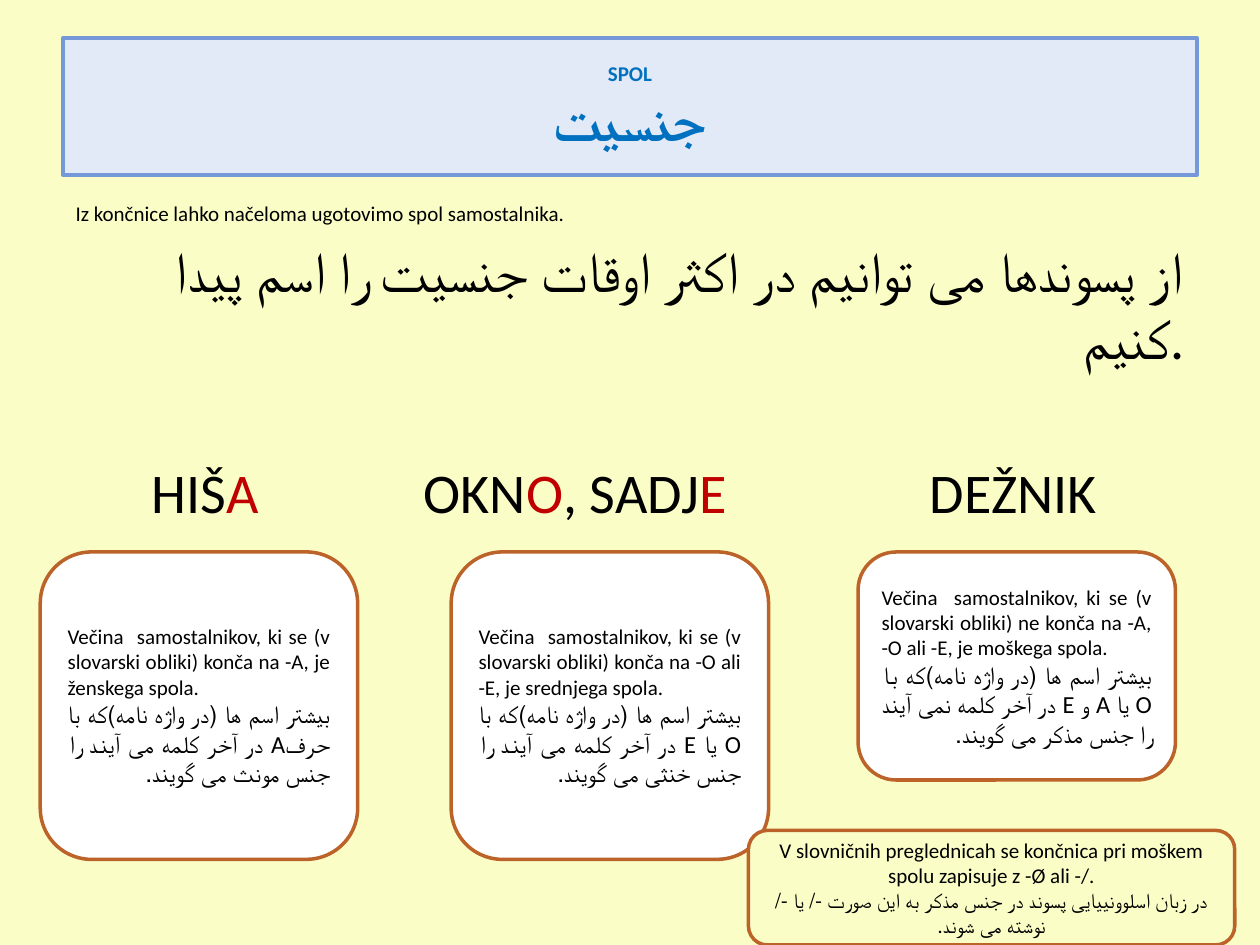
from lxml.etree import SubElement
from pptx import Presentation
from pptx.dml.color import RGBColor
from pptx.enum.shapes import MSO_SHAPE as Shape
from pptx.enum.text import MSO_ANCHOR as Anchor, MSO_AUTO_SIZE as AutoSize, PP_ALIGN as Align
from pptx.oxml.ns import qn
from pptx.util import Pt

CREAM = RGBColor(0xFA, 0xFE, 0xC6)
PALE_BLUE = RGBColor(0xE3, 0xEA, 0xF7)
BORDER_BLUE = RGBColor(0x75, 0x98, 0xD9)
TITLE_BLUE = RGBColor(0x00, 0x70, 0xC0)
BROWN = RGBColor(0xBC, 0x63, 0x29)
WHITE = RGBColor(0xFF, 0xFF, 0xFF)
BLACK = RGBColor(0x00, 0x00, 0x00)
RED = RGBColor(0xC0, 0x00, 0x00)


class GenderSlide:
    """Holds the style and the slide being built."""

    font = "Calibri"
    small, large = 12, 32
    border = 2

    def __init__(self, deck):
        self.slide = deck.slides.add_slide(deck.slide_layouts[1])
        self.slide.background.fill.solid()
        self.slide.background.fill.fore_color.rgb = CREAM

    def place(self, shape, left, top, width, height):
        shape.left, shape.top = Pt(left), Pt(top)
        shape.width, shape.height = Pt(width), Pt(height)

    def paint(self, shape, fill, line):
        shape.fill.solid()
        shape.fill.fore_color.rgb = fill
        shape.line.color.rgb = line
        shape.line.width = Pt(self.border)

    def format_run(self, run, size, color=BLACK, bold=None):
        run.font.name = self.font
        run.font.size = Pt(size)
        run.font.color.rgb = color
        run.font.bold = bold

    def title(self, latin, persian):
        title = self.slide.shapes.title
        self.place(title, 36, 21.6, 648, 78.5)
        self.paint(title, PALE_BLUE, BORDER_BLUE)
        frame = title.text_frame
        frame.auto_size = AutoSize.NONE
        frame.vertical_anchor = Anchor.MIDDLE
        frame.text = f"{latin}\n{persian}"
        for line, size in zip(frame.paragraphs, (self.small, self.large)):
            line.alignment = Align.CENTER
            self.format_run(line.runs[0], size, TITLE_BLUE, True)

    def body(self, latin, persian):
        body = self.slide.placeholders[1]
        self.place(body, 36, 110.9, 648, 140)
        frame = body.text_frame
        frame.auto_size = AutoSize.NONE
        frame.text = f"{latin}\n{persian}"
        rule, translation = frame.paragraphs
        translation.alignment = Align.RIGHT
        for line, gap, size in ((rule, 2.4, self.small), (translation, 6.4, self.large)):
            line.space_before = Pt(gap)
            SubElement(line._p.get_or_add_pPr(), qn("a:buNone"))
            self.format_run(line.runs[0], size)

    def example(self, left, width, parts):
        """Example words; stems and red endings alternate."""
        example = self.slide.shapes.add_textbox(Pt(left), Pt(257.9), Pt(width), Pt(46.2))
        example.text_frame.word_wrap = True
        line = example.text_frame.paragraphs[0]
        for index, part in enumerate(parts):
            run = line.add_run()
            run.text = part
            self.format_run(run, self.large, RED if index % 2 else BLACK)

    def rule_box(self, bounds, latin, persian, fill=WHITE, align=Align.JUSTIFY, persian_size=14):
        box = self.slide.shapes.add_shape(Shape.ROUNDED_RECTANGLE, *map(Pt, bounds))
        box.shadow.inherit = False
        self.paint(box, fill, BROWN)
        frame = box.text_frame
        frame.word_wrap = True
        frame.vertical_anchor = Anchor.MIDDLE
        frame.text = f"{latin}\n{persian}"
        for line, size in zip(frame.paragraphs, (self.small, persian_size)):
            line.alignment = align
            self.format_run(line.runs[0], size)
        frame.paragraphs[1]._p.get_or_add_pPr().set("rtl", "1")


def main():
    deck = Presentation()
    deck.slide_width, deck.slide_height = Pt(720), Pt(540)
    gender = GenderSlide(deck)

    # Heading and introduction
    gender.title("SPOL", "جنسیت")
    gender.body(
        "Iz končnice lahko načeloma ugotovimo spol samostalnika.",
        "از پسوندها می توانیم در اکثر اوقات جنسیت را اسم پیدا کنیم.",
    )

    # Example words above the rules
    gender.example(79.7, 90, ("HIŠ", "A"))
    gender.example(235, 200, ("OKN", "O", ", SADJ", "E"))
    gender.example(524.2, 125, ("DEŽNIK",))

    # One rule for each gender
    rules = [
        (23, 175.7,
         "Večina  samostalnikov, ki se (v slovarski obliki) konča na -A, je ženskega spola.",
         "بیشتر اسم ها (در واژه نامه)که با حرفA در آخر کلمه می آیند را جنس مونث می گویند."),
        (257.8, 175.7,
         "Večina  samostalnikov, ki se (v slovarski obliki) konča na -O ali -E, je srednjega spola.",
         "بیشتر اسم ها (در واژه نامه)که با O یا E در آخر کلمه می آیند را جنس خنثی می گویند."),
        (490.3, 130.3,
         "Večina  samostalnikov, ki se (v slovarski obliki) ne konča na -A, -O ali -E, je moškega spola.",
         "بیشتر اسم ها (در واژه نامه)که با O یا A و E در آخر کلمه نمی آیند را جنس مذکر می گویند."),
    ]
    for left, height, latin, persian in rules:
        gender.rule_box((left, 315.4, 181.4, height), latin, persian)

    # Note on the masculine ending
    gender.rule_box(
        (427.7, 474.5, 277.9, 65.5),
        "V slovničnih preglednicah se končnica pri moškem spolu zapisuje z -Ø ali -/.",
        "در زبان اسلوونییایی پسوند در جنس مذکر به این صورت -/ یا -/ نوشته می شوند.",
        fill=CREAM, align=Align.CENTER, persian_size=12,
    )

    deck.save("out.pptx")


if __name__ == "__main__":
    main()
